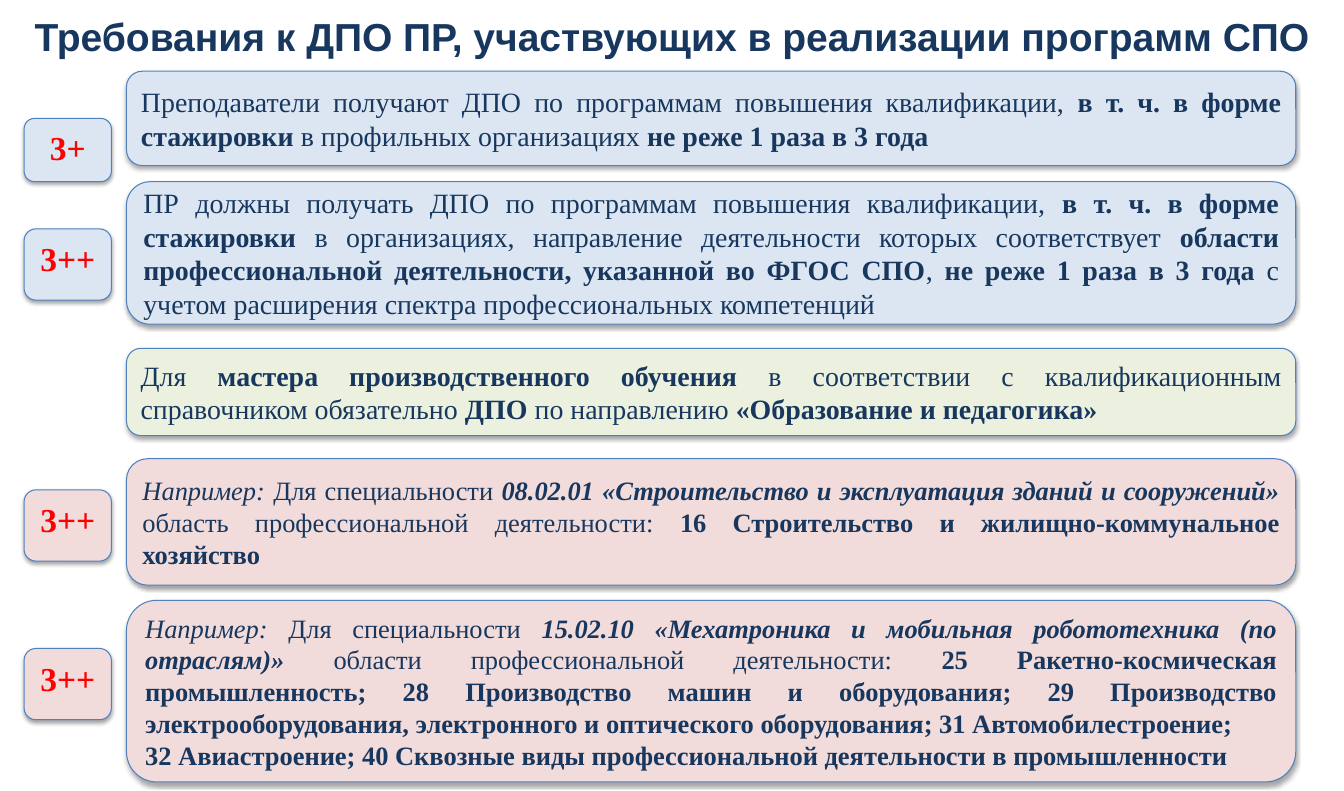
from lxml import etree
from pptx import Presentation
from pptx.dml.color import RGBColor
from pptx.enum.shapes import MSO_SHAPE as Shape
from pptx.enum.text import MSO_ANCHOR as Anchor, MSO_AUTO_SIZE as AutoSize, PP_ALIGN as Align
from pptx.oxml import parse_xml
from pptx.oxml.ns import qn
from pptx.util import Inches, Pt

NAVY = RGBColor(0x17, 0x37, 0x5E)
RED = RGBColor(0xFF, 0x00, 0x00)
OUTLINE = RGBColor(0x4F, 0x81, 0xBD)
BLUE = RGBColor(0xDC, 0xE6, 0xF2)
GREEN = RGBColor(0xEB, 0xF1, 0xDE)
PINK = RGBColor(0xF2, 0xDC, 0xDB)

SLIDE_WIDTH, SLIDE_HEIGHT = 13.39, 7.88
BADGE_LEFT, BADGE_WIDTH = 0.24, 0.87
PANEL_LEFT, PANEL_WIDTH = 1.26, 11.65

SHADOW = (
    '<a:outerShdw xmlns:a="http://schemas.openxmlformats.org/drawingml/2006/main" '
    f'blurRad="{Pt(3.1)}" dist="{Pt(1.8)}" dir="5400000" rotWithShape="0">'
    '<a:srgbClr val="000000"><a:alpha val="35000"/></a:srgbClr></a:outerShdw>'
)

TITLE = "Требования к ДПО ПР, участвующих в реализации программ СПО"

# Each run is a text and its style letters: b for bold, i for italic.
TEACHERS = [[
    ("Преподаватели получают ДПО по программам повышения квалификации, ", ""),
    ("в т. ч. в форме стажировки", "b"),
    (" в профильных организациях ", ""),
    ("не реже 1 раза в 3 года", "b"),
]]
STAFF = [[
    ("ПР должны получать ДПО по программам повышения квалификации, ", ""),
    ("в т. ч. в форме стажировки ", "b"),
    ("в организациях, направление деятельности которых соответствует ", ""),
    ("области профессиональной деятельности, указанной во ФГОС СПО", "b"),
    (", ", ""),
    ("не реже 1 раза в 3 года ", "b"),
    ("с учетом расширения спектра профессиональных компетенций", ""),
]]
MASTERS = [[
    ("Для ", ""),
    ("мастера производственного обучения ", "b"),
    ("в соответствии с квалификационным справочником обязательно ", ""),
    ("ДПО", "b"),
    (" по направлению ", ""),
    ("«Образование и педагогика»", "b"),
]]
CONSTRUCTION = [[
    ("Например: ", "i"),
    ("Для специальности ", ""),
    ("08.02.01 «Строительство и эксплуатация зданий и сооружений» ", "bi"),
    ("область профессиональной деятельности: ", ""),
    ("16 Строительство и жилищно-коммунальное хозяйство", "b"),
]]
ROBOTICS = [
    [
        ("Например: ", "i"),
        ("Для специальности ", ""),
        ("15.02.10 «Мехатроника и мобильная робототехника (по отраслям)» ", "bi"),
        ("области профессиональной деятельности: ", ""),
        ("25 Ракетно-космическая промышленность; 28 Производство машин и оборудования; "
         "29 Производство электрооборудования, электронного и оптического оборудования; "
         "31 Автомобилестроение;", "b"),
    ],
    [("32 Авиастроение; 40 Сквозные виды профессиональной деятельности в промышленности", "b")],
]

# top, height, fill, font size, paragraphs
PANELS = [
    (0.71, 0.94, BLUE, 20, TEACHERS),
    (1.81, 1.42, BLUE, 20, STAFF),
    (3.47, 0.87, GREEN, 20, MASTERS),
    (4.57, 1.26, PINK, 19, CONSTRUCTION),
    (5.98, 1.81, PINK, 19, ROBOTICS),
]
# top, height, fill, label
BADGES = [
    (1.18, 0.63, BLUE, "3+"),
    (2.28, 0.71, BLUE, "3++"),
    (4.88, 0.71, PINK, "3++"),
    (6.46, 0.71, PINK, "3++"),
]


class SlideBuilder:
    title_font = "Arial"
    text_font = "Times New Roman"

    def __init__(self, slide):
        self.slide = slide

    def style(self, run, font_name, size, color, bold=False, italic=False):
        font = run.font
        font.name, font.size = font_name, Pt(size)
        font.bold, font.italic = bold, italic
        font.color.rgb = color

    def frame(self, shape, anchor, side, edge):
        """Set wrapping, anchor and insets, and return the text frame."""
        frame = shape.text_frame
        frame.word_wrap = True
        frame.auto_size = AutoSize.NONE
        frame.vertical_anchor = anchor
        frame.margin_left = frame.margin_right = Inches(side)
        frame.margin_top = frame.margin_bottom = Inches(edge)
        return frame

    def label(self, frame, text, font_name, size, color):
        """Write one centred bold line."""
        frame.text = text
        line = frame.paragraphs[0]
        line.alignment = Align.CENTER
        self.style(line.runs[0], font_name, size, color, bold=True)

    def title(self, text):
        heading = self.slide.shapes.title
        heading.left = heading.top = Inches(0)
        heading.width, heading.height = Inches(SLIDE_WIDTH), Inches(0.71)
        frame = self.frame(heading, Anchor.MIDDLE, 0.12, 0.06)
        self.label(frame, text, self.title_font, 28, NAVY)

    def card(self, left, top, width, height, fill):
        """Draw a rounded box with a thin outline and a soft shadow."""
        box = self.slide.shapes.add_shape(
            Shape.ROUNDED_RECTANGLE, Inches(left), Inches(top), Inches(width), Inches(height))
        box.fill.solid()
        box.fill.fore_color.rgb = fill
        box.line.color.rgb = OUTLINE
        box.line.width = Pt(0.75)
        box.shadow.inherit = False
        box.element.spPr.find(qn("a:effectLst")).append(parse_xml(SHADOW))
        return box

    def badge(self, top, height, fill, text):
        box = self.card(BADGE_LEFT, top, BADGE_WIDTH, height, fill)
        frame = self.frame(box, Anchor.TOP, 0.12, 0.06)
        self.label(frame, text, self.text_font, 24, RED)

    def panel(self, top, height, fill, size, paragraphs):
        box = self.card(PANEL_LEFT, top, PANEL_WIDTH, height, fill)
        frame = self.frame(box, Anchor.MIDDLE, 0.1, 0.05)
        for number, parts in enumerate(paragraphs):
            paragraph = frame.add_paragraph() if number else frame.paragraphs[0]
            paragraph.alignment = Align.JUSTIFY
            for text, marks in parts:
                run = paragraph.add_run()
                run.text = text
                self.style(run, self.text_font, size, NAVY, "b" in marks, "i" in marks)


def main():
    presentation = Presentation()
    presentation.slide_width = Inches(SLIDE_WIDTH)
    presentation.slide_height = Inches(SLIDE_HEIGHT)
    title_only = presentation.slide_layouts[5]
    builder = SlideBuilder(presentation.slides.add_slide(title_only))
    builder.title(TITLE)
    for panel in PANELS:
        builder.panel(*panel)
    for badge in BADGES:
        builder.badge(*badge)
    presentation.save("out.pptx")


if __name__ == "__main__":
    main()
